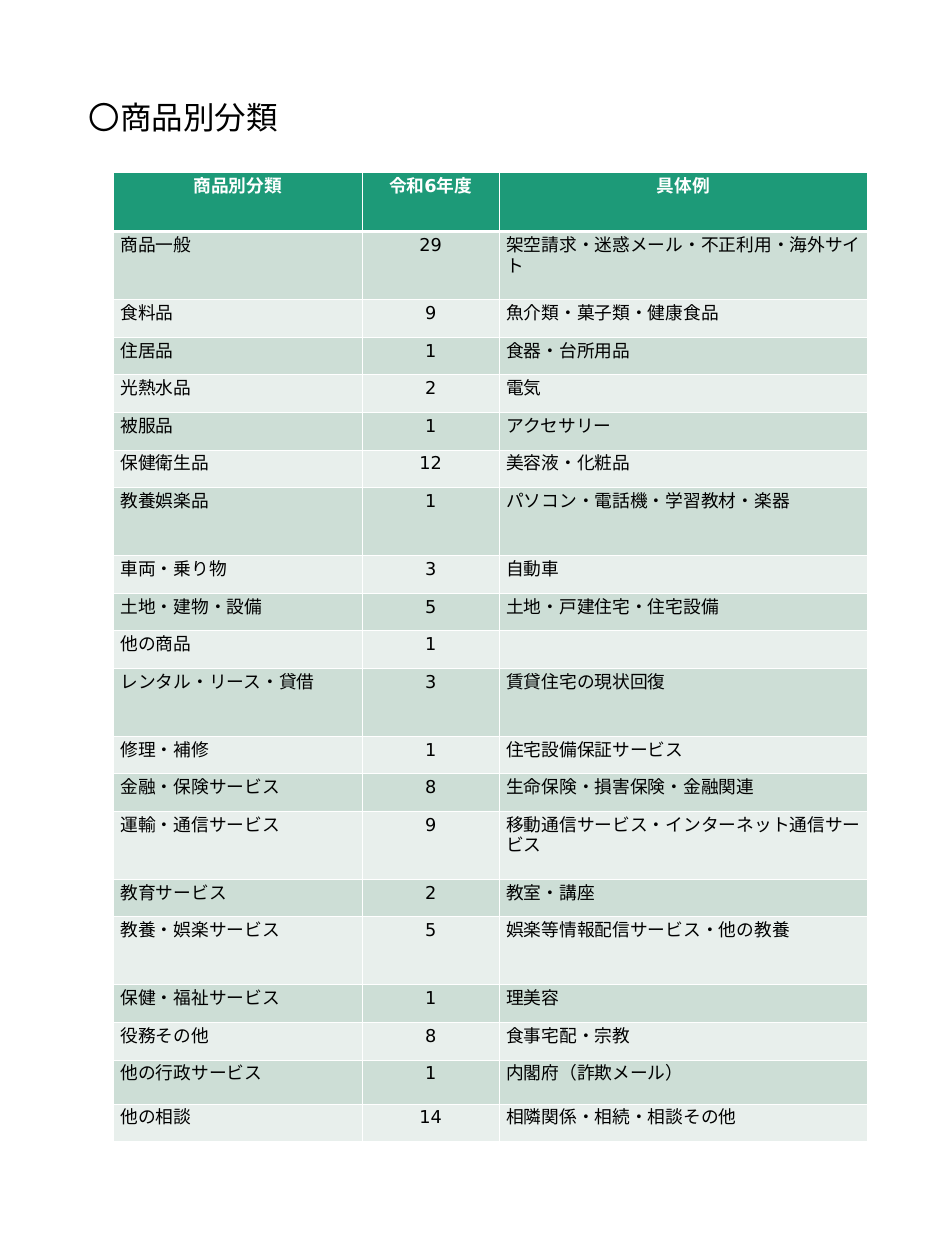
from pptx import Presentation
from pptx.dml.color import RGBColor
from pptx.enum.text import MSO_ANCHOR, PP_ALIGN
from pptx.oxml import parse_xml
from pptx.oxml.ns import nsdecls
from pptx.util import Inches, Pt

WHITE = RGBColor(0xFF, 0xFF, 0xFF)
BLACK = RGBColor(0, 0, 0)
GREEN = RGBColor(0x1D, 0x9A, 0x78)
BANDS = RGBColor(0xE8, 0xEF, 0xEC), RGBColor(0xCD, 0xDE, 0xD6)

TITLE = "〇商品別分類\u3000".replace("\u3000", "　")
HEAD = ("商品別分類", "令和6年度", "具体例")
ITEMS = [
    ("商品一般", 29, "架空請求・迷惑メール・不正利用・海外サイト"),
    ("食料品", 9, "魚介類・菓子類・健康食品"),
    ("住居品", 1, "食器・台所用品"),
    ("光熱水品", 2, "電気"),
    ("被服品", 1, "アクセサリー"),
    ("保健衛生品", 12, "美容液・化粧品"),
    ("教養娯楽品", 1, "パソコン・電話機・学習教材・楽器"),
    ("車両・乗り物", 3, "自動車"),
    ("土地・建物・設備", 5, "土地・戸建住宅・住宅設備"),
    ("他の商品", 1, ""),
    ("レンタル・リース・貸借", 3, "賃貸住宅の現状回復"),
    ("修理・補修", 1, "住宅設備保証サービス"),
    ("金融・保険サービス", 8, "生命保険・損害保険・金融関連"),
    ("運輸・通信サービス", 9, "移動通信サービス・インターネット通信サービス"),
    ("教育サービス", 2, "教室・講座"),
    ("教養・娯楽サービス", 5, "娯楽等情報配信サービス・他の教養"),
    ("保健・福祉サービス", 1, "理美容"),
    ("役務その他", 8, "食事宅配・宗教"),
    ("他の行政サービス", 1, "内閣府（詐欺メール）"),
    ("他の相談", 14, "相隣関係・相続・相談その他"),
]
COLS = (3.51, 1.93, 5.2)
LOW = 0.53
TALL = {0: 0.84, 1: 0.96, 7: 0.96, 11: 0.96, 14: 0.96, 16: 0.96, 19: 0.62}


def write(frame, text, size=18, font="DejaVu Sans", color=BLACK, bold=False,
          align=PP_ALIGN.LEFT):
    para = frame.paragraphs[0]
    para.alignment = align
    para.font.size = Pt(size)
    if text:
        run = para.add_run()
        run.text = text
        run.font.size, run.font.name, run.font.bold = Pt(size), font, bold
        run.font.color.rgb = color
        props = run.font._element
        props.set("lang", "ja-JP")
        props.append(parse_xml(f'<a:ea {nsdecls("a")} typeface="{font}"/>'))
    return para


def edge(cell, row):
    wide = {("T", 1): 3, ("B", 0): 3}
    for side in "LRTB":
        width = Pt(wide.get((side, row), 1))
        cell._tc.get_or_add_tcPr().append(parse_xml(
            f'<a:ln{side} {nsdecls("a")} w="{width}"><a:solidFill>'
            f'<a:srgbClr val="{WHITE}"/></a:solidFill></a:ln{side}>'))


def title(slide):
    box = slide.shapes.add_textbox(
        Inches(0.58), Inches(1.11), Inches(4.46), Inches(0.87))
    frame = box.text_frame
    frame.word_wrap = True
    frame.vertical_anchor = MSO_ANCHOR.BOTTOM
    para = write(frame, TITLE, size=32, font="Noto Sans Mono",
                 align=PP_ALIGN.CENTER)
    para.line_spacing = 0.9
    para.space_before = Pt(10)
    props = para._p.get_or_add_pPr()
    props.set("marL", str(Inches(0.25)))
    props.set("indent", str(Inches(-0.25)))


def table(slide):
    rows = [HEAD] + ITEMS
    highs = [TALL.get(r, LOW) for r in range(len(rows))]
    grid = slide.shapes.add_table(
        len(rows), len(COLS), Inches(1.6), Inches(2.43),
        Inches(sum(COLS)), Inches(sum(highs))).table
    for col, width in zip(grid.columns, COLS):
        col.width = Inches(width)
    for r, (row, high) in enumerate(zip(rows, highs)):
        grid.rows[r].height = Inches(high)
        top = r == 0
        for c, value in enumerate(row):
            cell = grid.cell(r, c)
            edge(cell, r)
            cell.fill.solid()
            cell.fill.fore_color.rgb = GREEN if top else BANDS[r % 2]
            write(cell.text_frame, str(value), bold=top,
                  color=WHITE if top else BLACK,
                  align=PP_ALIGN.CENTER if top or c == 1 else PP_ALIGN.LEFT)


def main():
    """Build the slide of consultations by product class."""
    deck = Presentation()
    deck.slide_width, deck.slide_height = Inches(13.33), Inches(17.78)
    slide = deck.slides.add_slide(deck.slide_layouts[6])
    title(slide)
    table(slide)
    deck.save("out.pptx")


if __name__ == "__main__":
    main()
